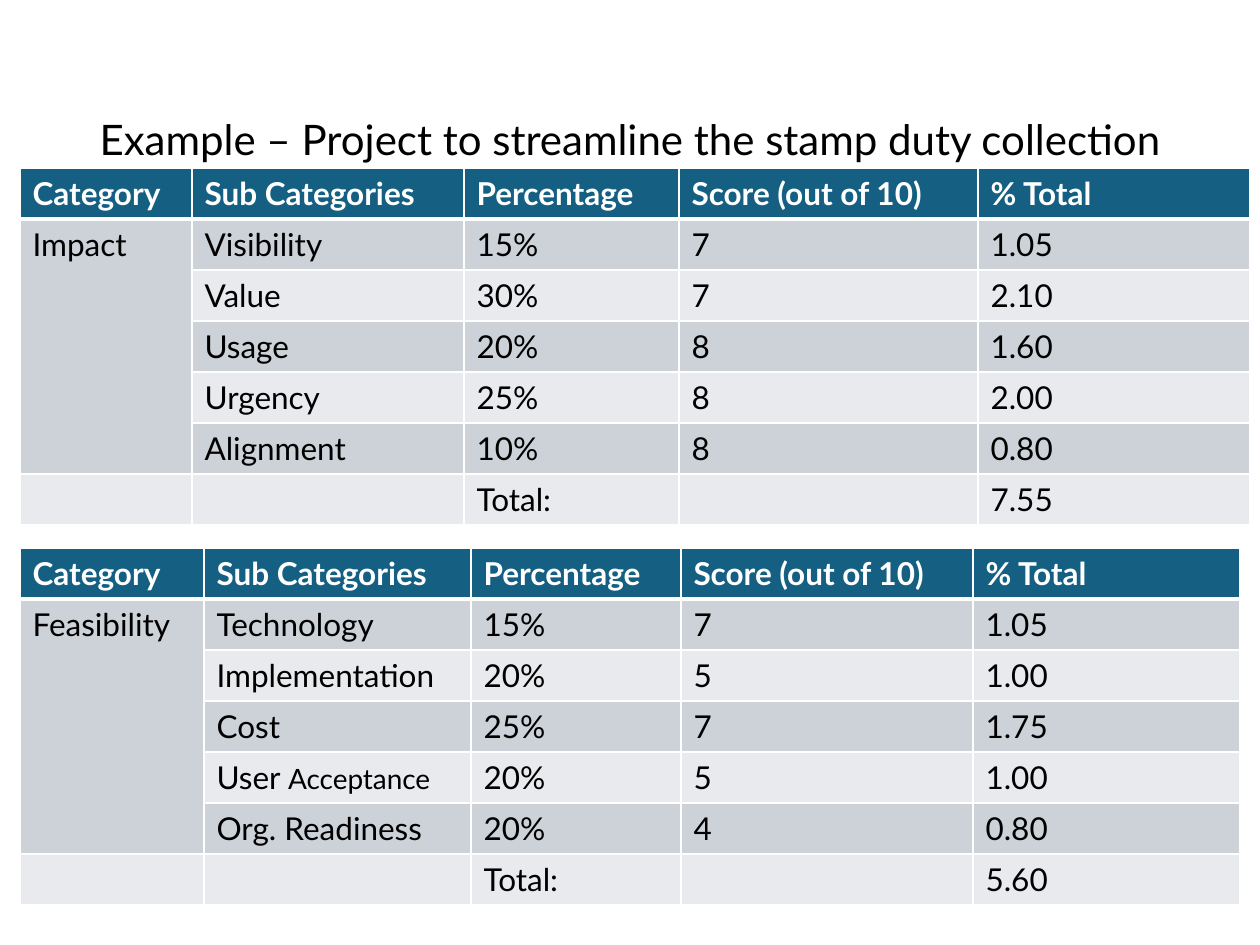
from lxml import etree
from pptx import Presentation
from pptx import util as u
from pptx.dml.color import RGBColor
from pptx.enum import text
from pptx.oxml.ns import qn

PX = 914400 // 126
FONT = "Lato"
HEX = {"head": "156082", "dark": "CCD2D8", "light": "E8EAED",
       "white": "FFFFFF", "black": "000000"}

TITLE = "Example – Project to streamline the stamp duty collection"
HEAD = ["Category", "Sub Categories", "Percentage", "Score (out of 10)", "% Total"]
# A cell is a string, or a list of (text, points) runs.
TABLES = [
    {"top": 168, "cols": [172, 272, 215, 299, 272], "rows": [
        ["Impact", "Visibility", "15%", "7", "1.05"],
        ["", "Value", "30%", "7", "2.10"],
        ["", "Usage", "20%", "8", "1.60"],
        ["", "Urgency", "25%", "8", "2.00"],
        ["", "Alignment", "10%", "8", "0.80"],
        ["", "", "Total:", "", "7.55"]]},
    {"top": 548, "cols": [184, 267, 210, 292, 267], "rows": [
        ["Feasibility", "Technology", "15%", "7", "1.05"],
        ["", "Implementation", "20%", "5", "1.00"],
        ["", "Cost", "25%", "7", "1.75"],
        ["", [("User ", 18), ("Acceptance", 16)], "20%", "5", "1.00"],
        ["", "Org. Readiness", "20%", "4", "0.80"],
        ["", "", "Total:", "", "5.60"]]},
]
LEFT, ROW = 20, 51


def color(name):
    return RGBColor.from_string(HEX[name])


def write(para, words, size, ink, bold=False):
    run = para.add_run()
    run.text = words
    look = {"name": FONT, "size": u.Pt(size), "bold": bold}
    for key, val in look.items():
        setattr(run.font, key, val)
    run.font.color.rgb = color(ink)


def edge(cell, widths):
    """Draw white cell borders; widths maps a side (L, R, T, B) to points."""
    props = cell._tc.get_or_add_tcPr()
    for side, width in widths.items():
        line = etree.SubElement(props, qn(f"a:ln{side}"), w=str(u.Pt(width)))
        fill = etree.SubElement(line, qn("a:solidFill"))
        etree.SubElement(fill, qn("a:srgbClr"), val=HEX["white"])


def add_grid(slide, top, cols, rows):
    rows = [HEAD] + rows
    box = (LEFT, top, sum(cols), ROW * len(rows))
    grid = slide.shapes.add_table(len(rows), len(cols), *(n * PX for n in box)).table
    for col, width in zip(grid.columns, cols):
        col.width = width * PX
    for r, row in enumerate(rows):
        shade = "head" if r == 0 else "dark" if r % 2 else "light"
        for c, item in enumerate(row):
            cell = grid.cell(r, c)
            edge(cell, {"L": 1, "R": 1, "T": 3 if r == 1 else 1, "B": 3 if r == 0 else 1})
            cell.fill.solid()
            cell.fill.fore_color.rgb = color(shade)
            runs = [(item, 18)] if isinstance(item, str) else item
            for words, size in runs:
                if words:
                    write(cell.text_frame.paragraphs[0], words, size,
                          "black" if r else "white", r == 0)
    grid.cell(1, 0).merge(grid.cell(5, 0))


def main():
    deck = Presentation()
    deck.slide_width, deck.slide_height = u.Inches(10), u.Inches(7.5)
    slide = deck.slides.add_slide(deck.slide_layouts[5])

    title = slide.shapes.title
    box = {"left": 87, "top": 50, "width": 1100, "height": 183}
    for key, val in box.items():
        setattr(title, key, val * PX)
    frame = title.text_frame
    frame.auto_size = text.MSO_AUTO_SIZE.NONE
    frame.vertical_anchor = text.MSO_ANCHOR.MIDDLE
    para = frame.paragraphs[0]
    para.alignment, para.line_spacing = text.PP_ALIGN.LEFT, 0.9
    write(para, TITLE, 24, "black")

    for table in TABLES:
        add_grid(slide, **table)
    deck.save("out.pptx")


if __name__ == "__main__":
    main()
